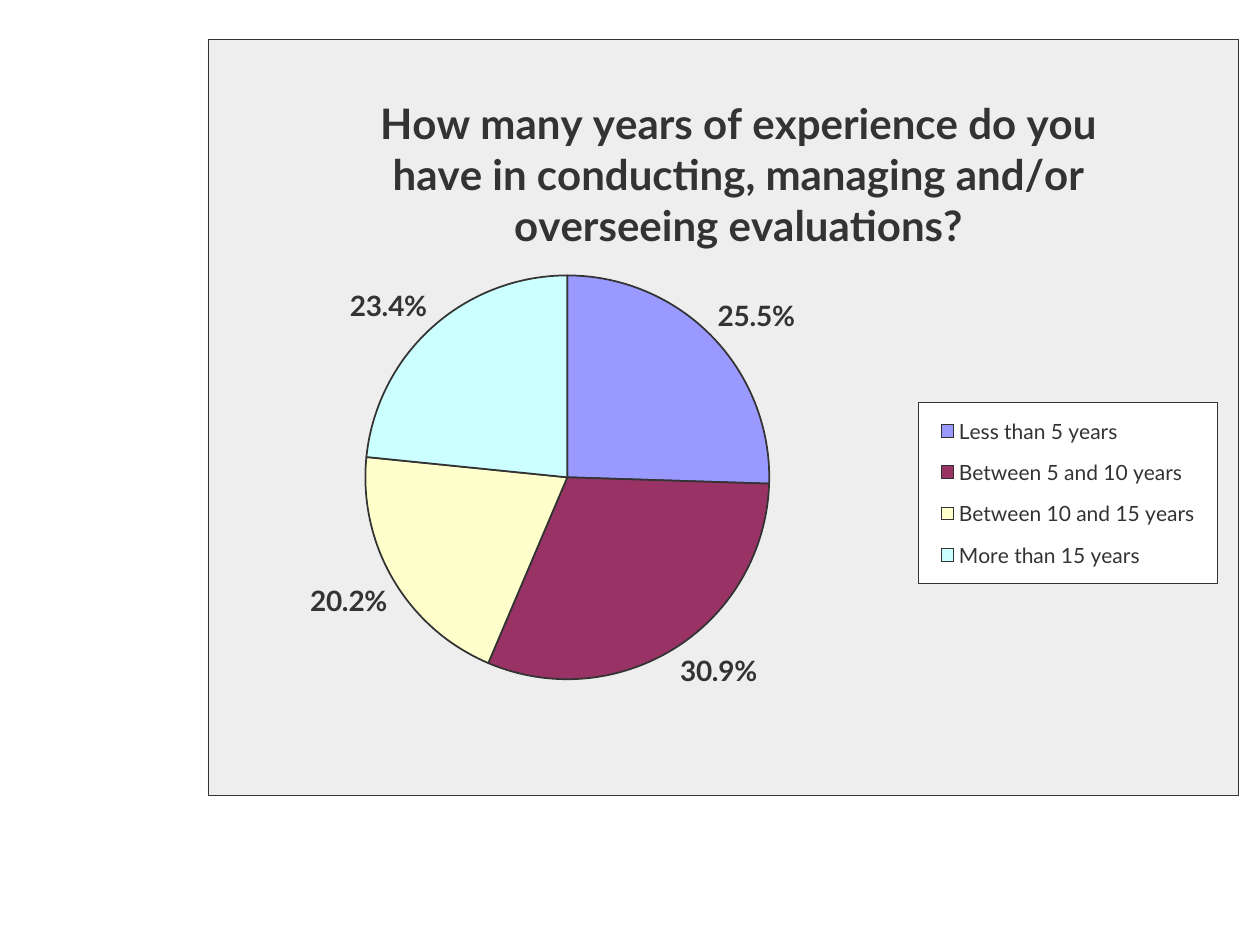
from typing import NamedTuple

from lxml.etree import _Element as Element
from pptx import Presentation
from pptx.chart.data import CategoryChartData
from pptx.dml.color import RGBColor
from pptx.enum.chart import XL_CHART_TYPE as ChartType
from pptx.enum.chart import XL_LABEL_POSITION as LabelPosition
from pptx.enum.chart import XL_LEGEND_POSITION as LegendPosition
from pptx.oxml import parse_xml
from pptx.oxml.ns import nsdecls, qn
from pptx.util import Pt

FONT = "Lato"
COLORS = {
    "ink": "333333",
    "panel": "EEEEEE",
    "legend": "FFFFFF",
    "lavender": "9999FF",
    "plum": "993366",
    "cream": "FFFFCC",
    "aqua": "CCFFFF",
}
QUESTION = ("How many years of experience do you have in conducting, "
            "managing and/or overseeing evaluations?")


class Answer(NamedTuple):
    label: str
    share: float
    color: str


ANSWERS = [
    Answer("Less than 5 years", 0.255, "lavender"),
    Answer("Between 5 and 10 years", 0.309, "plum"),
    Answer("Between 10 and 15 years", 0.202, "cream"),
    Answer("More than 15 years", 0.234, "aqua"),
]


def rgb(name: str) -> RGBColor:
    return RGBColor.from_string(COLORS[name])


def style_font(font, *, size: float, bold: bool = False) -> None:
    font.name = FONT
    font.size = Pt(size)
    font.bold = bold
    font.color.rgb = rgb("ink")


def area_format(fill: str, border: float = 0) -> Element:
    """Return fill and outline properties for a part of the chart."""
    line = "<a:noFill/>"
    if border:
        line = f'<a:solidFill><a:srgbClr val="{COLORS["ink"]}"/></a:solidFill>'
    return parse_xml(
        f'<c:spPr {nsdecls("c", "a")}>'
        f'<a:solidFill><a:srgbClr val="{COLORS[fill]}"/></a:solidFill>'
        f'<a:ln w="{Pt(border)}">{line}</a:ln></c:spPr>')


def manual_layout(x: float, y: float, width: float = 0, height: float = 0,
                  inner: bool = False) -> Element:
    """Return a layout in fractions of the chart's width and height."""
    values = {"xMode": "edge", "yMode": "edge", "x": x, "y": y}
    if inner:
        values = {"layoutTarget": "inner", **values}
    if width:
        values.update(w=width, h=height)
    items = "".join(f'<c:{tag} val="{value}"/>' for tag, value in values.items())
    return parse_xml(f'<c:layout {nsdecls("c")}><c:manualLayout>{items}'
                     '</c:manualLayout></c:layout>')


def place_after(part: Element, tag: str, layout: Element) -> None:
    """Give a chart part its layout, right after the child named by tag."""
    for old in part.findall(qn("c:layout")):
        part.remove(old)
    part.find(qn(tag)).addnext(layout)


def add_title(chart, text: str) -> None:
    chart.has_title = True
    title = chart.chart_title
    title.include_in_layout = False
    span = title.text_frame.paragraphs[0].add_run()
    span.text = text
    style_font(span.font, size=24, bold=True)
    place_after(chart._chartSpace.chart.find(qn("c:title")), "c:tx",
                manual_layout(0.16, 0.06))


def add_legend(chart) -> None:
    chart.has_legend = True
    legend = chart.legend
    legend.position = LegendPosition.RIGHT
    legend.include_in_layout = False
    style_font(legend.font, size=12)
    part = chart._chartSpace.chart.find(qn("c:legend"))
    place_after(part, "c:legendPos", manual_layout(0.69, 0.48, 0.29, 0.24))
    part.find(qn("c:overlay")).addnext(area_format("legend", 0.25))


def style_pie(chart) -> None:
    plot = chart.plots[0]
    plot.vary_by_categories = True
    for index, answer in enumerate(ANSWERS):
        slice_format = plot.series[0].points[index].format
        slice_format.fill.solid()
        slice_format.fill.fore_color.rgb = rgb(answer.color)
        slice_format.line.color.rgb = rgb("ink")
        slice_format.line.width = Pt(1)
    labels = plot.series[0].data_labels
    labels.show_value = True
    labels.number_format = "0.0%"
    labels.number_format_is_linked = False
    labels.position = LabelPosition.OUTSIDE_END
    style_font(labels.font, size=16, bold=True)

    area = chart._chartSpace.chart.plotArea
    for old in area.findall(qn("c:layout")):
        area.remove(old)
    area.insert(0, manual_layout(0.153, 0.247, 0.392, 0.665, inner=True))
    area.append(area_format("panel"))


def main() -> None:
    deck = Presentation()
    deck.slide_width, deck.slide_height = Pt(720), Pt(540)
    page = deck.slides.add_slide(deck.slide_layouts[6])

    data = CategoryChartData(number_format="0.0%")
    data.categories = [answer.label for answer in ANSWERS]
    data.add_series("Series 1", [answer.share for answer in ANSWERS])
    chart = page.shapes.add_chart(ChartType.PIE, Pt(118.6), Pt(22.5),
                                  Pt(589), Pt(432), data).chart
    style_font(chart.font, size=10)
    add_title(chart, QUESTION)
    add_legend(chart)
    style_pie(chart)
    chart._chartSpace.chart.addnext(area_format("panel", 0.25))
    deck.save("out.pptx")


if __name__ == "__main__":
    main()
